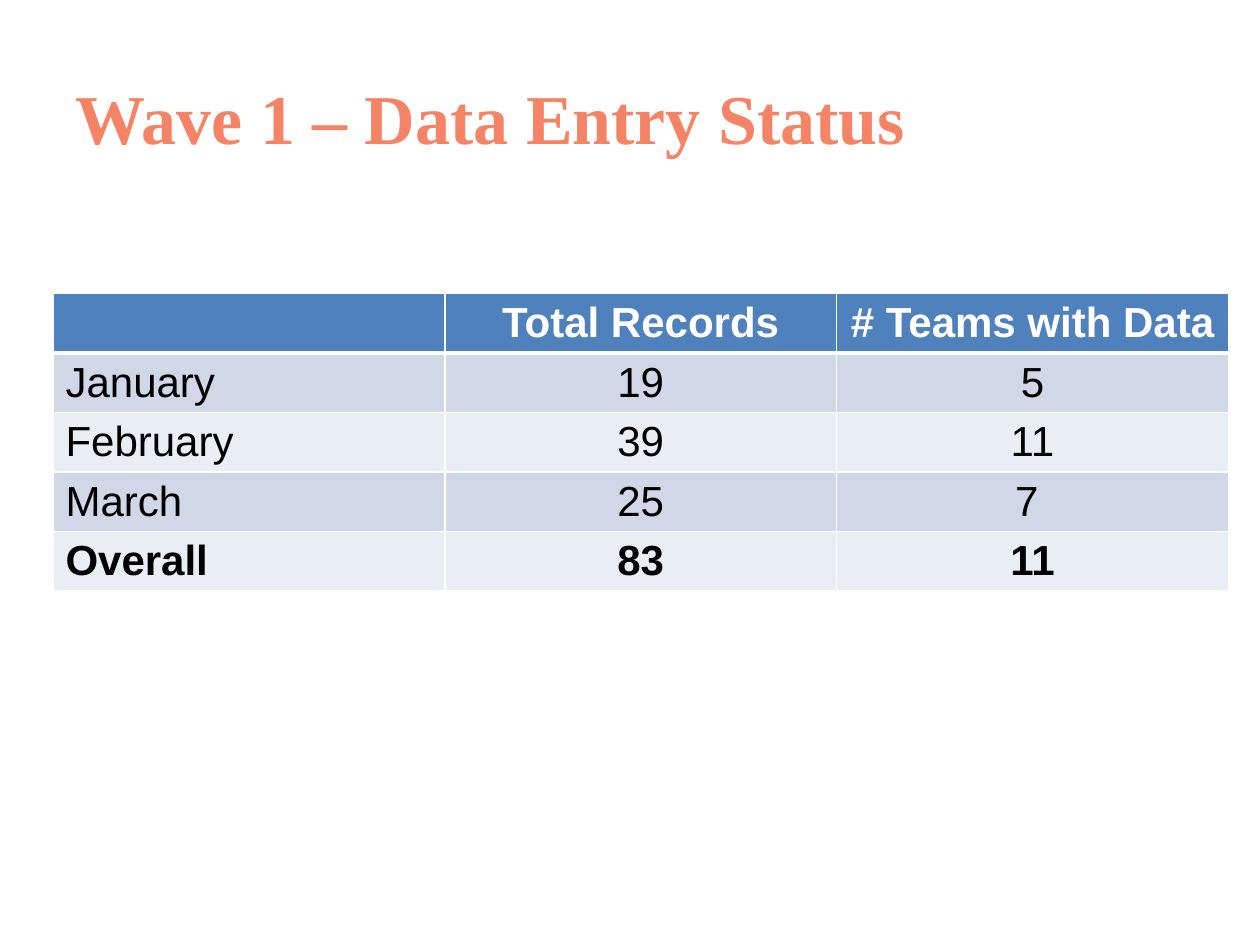
from lxml import etree
from pptx import Presentation
from pptx.dml.color import RGBColor
from pptx.enum import text
from pptx.oxml import ns
from pptx.util import Inches, Pt

COLORS = {
    "title": "F58466",
    "header": "4F81BD",
    "band_dark": "D0D8E8",
    "band_light": "E9EDF4",
    "white": "FFFFFF",
    "black": "000000",
}

ROWS = [
    ["", "Total Records", "# Teams with Data"],
    ["January", "19", "5"],
    ["February", "39", "11"],
    ["March", "25", "7 "],
    ["Overall", "83", "11"],
]


def color(name):
    return RGBColor.from_string(COLORS[name])


def write(frame, words, font="Arial", size=24, ink="black", bold=False,
          align=text.PP_ALIGN.LEFT):
    para = frame.paragraphs[0]
    para.alignment = align
    if not words:
        return
    span = para.add_run()
    span.text = words
    span.font.name = font
    span.font.size = Pt(size)
    span.font.bold = bold
    span.font.color.rgb = color(ink)


def add_borders(cell, **widths):
    """Draw white cell borders; widths are points keyed L, R, T, B."""
    properties = cell._tc.get_or_add_tcPr()
    for side in "LRTB":
        line = etree.SubElement(properties, ns.qn(f"a:ln{side}"),
                                w=str(Pt(widths.get(side, 1))))
        fill = etree.SubElement(line, ns.qn("a:solidFill"))
        etree.SubElement(fill, ns.qn("a:srgbClr"), val=COLORS["white"])


class StatusDeck:
    def __init__(self):
        self.deck = Presentation()
        self.deck.slide_width = Inches(10)
        self.deck.slide_height = Inches(7.5)
        self.page = self.deck.slides.add_slide(self.deck.slide_layouts[5])

    def title(self, words):
        box = self.page.shapes.title
        box.left, box.top = Inches(0.5), Inches(0.3)
        box.width, box.height = Inches(9), Inches(1.25)
        box.text_frame.vertical_anchor = text.MSO_ANCHOR.MIDDLE
        write(box.text_frame, words, font="Times New Roman", size=40,
              ink="title", bold=True)

    def table(self, rows, left, top, column_width, row_height):
        columns = len(rows[0])
        table = self.page.shapes.add_table(
            len(rows), columns, Inches(left), Inches(top),
            Inches(column_width * columns),
            Inches(row_height * len(rows))).table
        for column in table.columns:
            column.width = Inches(column_width)
        last = len(rows) - 1
        for r, values in enumerate(rows):
            table.rows[r].height = Inches(row_height)
            header = r == 0
            band = "band_dark" if r % 2 else "band_light"
            for c, value in enumerate(values):
                cell = table.cell(r, c)
                add_borders(cell, T=3 if r == 1 else 1, B=3 if header else 1)
                cell.fill.solid()
                cell.fill.fore_color.rgb = color("header" if header else band)
                write(cell.text_frame, value,
                      ink="white" if header else "black",
                      bold=r in (0, last),
                      align=text.PP_ALIGN.CENTER if c else text.PP_ALIGN.LEFT)


def main():
    status = StatusDeck()
    status.title("Wave 1 – Data Entry Status")
    status.table(ROWS, left=0.42, top=2.33, column_width=3.11, row_height=0.41)
    status.deck.save("out.pptx")


if __name__ == "__main__":
    main()
